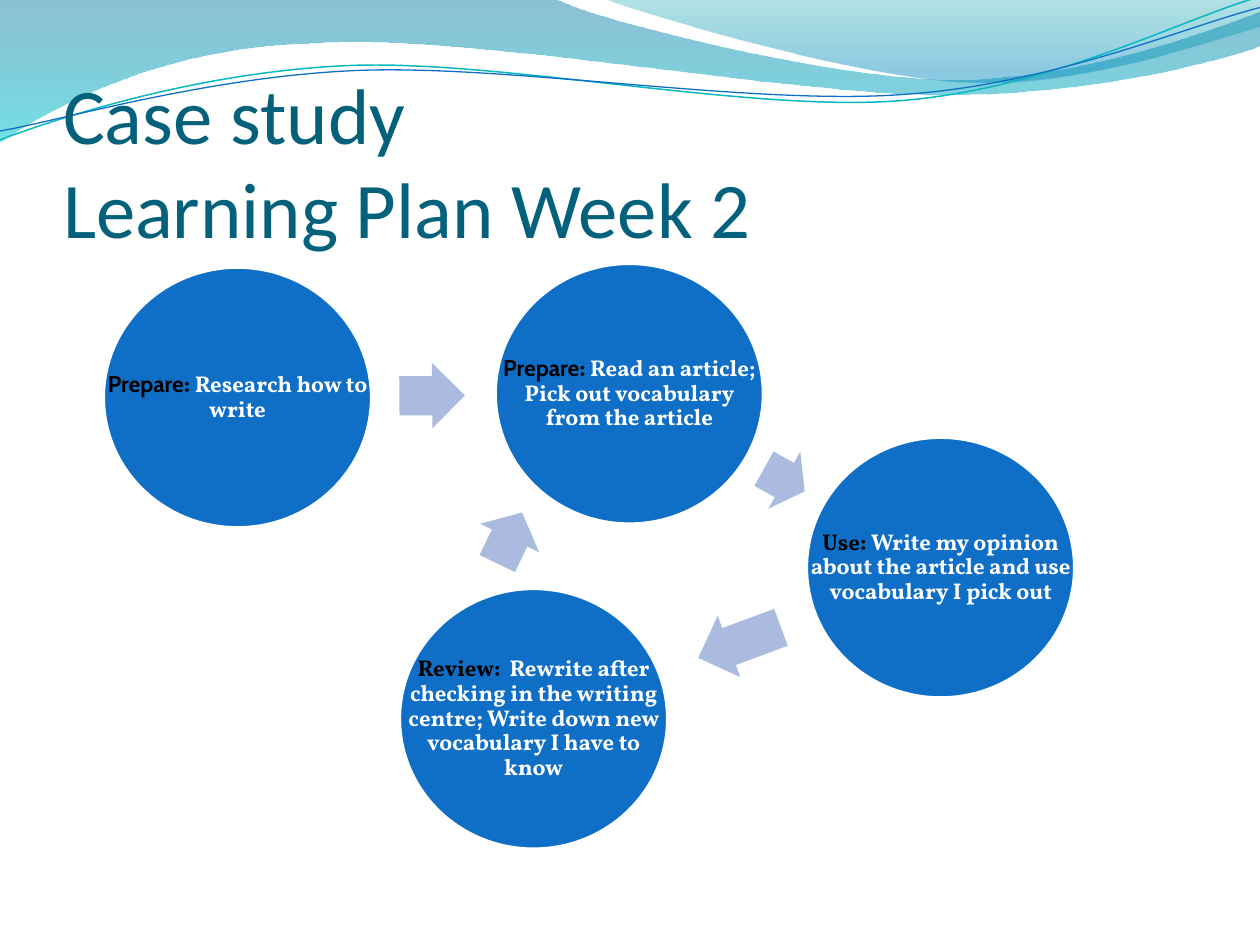
from dataclasses import dataclass
from math import cos, radians, sin

from lxml import etree
from pptx import Presentation
from pptx import util as u
from pptx.dml.color import RGBColor
from pptx.enum import shapes, text
from pptx.oxml.ns import qn


@dataclass(frozen=True)
class Theme:
    title: str = "04617B"
    circle: str = "0F6FC6"
    arrow: str = "ABBBDF"
    white: str = "FFFFFF"
    black: str = "000000"
    teal_line: str = "0AB8BF"
    title_font: str = "Calibri"
    body_font: str = "Vollkorn"
    label_font: str = "Cabin"
    title_size: int = 45
    body_size: int = 13


THEME = Theme()
CIRCLE_W, CIRCLE_H = 2.13, 2.07
ARROW_H = 0.52
WAVE_TILT = -2.7

BANDS = [
    ([(0, 0), (4.4, -0.01), (4.76, 0.17, 6.64, 0.63, 7.58, 0.63),
      (8.53, 0.63, 9.58, 0.26, 10, 0.09), (10.01, 0.36),
      (9.83, 0.44, 8.7, 0.76, 7.46, 0.75), (6.22, 0.75, 3.82, 0.28, 2.57, 0.34),
      (1.29, 0.36, 0.46, 0.83, -0.01, 1.13), (0, 0)],
     [(0, "0074A1", 45), (1, "00C6CF", 55)]),
    ([(4.79, -0.01), (5.09, 0.11, 6.82, 0.62, 7.69, 0.65),
      (8.56, 0.69, 9.61, 0.32, 10, 0.21), (10, 0), (4.79, -0.01)],
     [(0, "00A1A9", 30), (0.8, "008BBF", 45)]),
]
WAVES = [
    ([(0, 1.11), (0.48, 0.93, 1.58, 0.57, 2.77, 0.52),
      (3.95, 0.47, 5.93, 0.89, 7.13, 0.8), (8.33, 0.71, 9.38, 0.15, 9.98, -0.02)],
     (4.99, 0.57), THEME.teal_line, 0.85),
    ([(0, 1.04), (0.47, 0.96, 1.64, 0.61, 2.83, 0.56),
      (4.03, 0.51, 5.97, 0.84, 7.17, 0.75), (8.36, 0.67, 9.41, 0.21, 10, 0.06)],
     (5, 0.59), THEME.circle, 0.75),
]
STEPS = [
    (3.93, 2.09, [("Prepare", THEME.label_font), (": ", THEME.body_font)],
     "Read an article; Pick out vocabulary from the article"),
    (6.4, 3.47, [("Use: ", THEME.body_font)],
     "Write my opinion about the article and use vocabulary I pick out"),
    (3.17, 4.67, [("Review:  ", THEME.body_font)],
     "Rewrite after checking in the writing centre; Write down new vocabulary I have to know"),
    (0.82, 2.12, [("Prepare", THEME.label_font), (": ", THEME.body_font)],
     "Research how to write"),
]
ARROWS = [
    (6.04, 3.55, 0.37, 29.2),
    (5.52, 4.84, 0.7, 159.7),
    (3.82, 4.01, 0.45, 295.9),
    (3.17, 2.88, 0.52, 359.6),
]


def rgb(value):
    return RGBColor.from_string(value)


def pairs(segment):
    return list(zip(segment[::2], segment[1::2]))


def turn(segment, center, degrees):
    c, d = cos(radians(degrees)), sin(radians(degrees))
    cx, cy = center
    return tuple(v for x, y in pairs(segment) for v in (
        cx + (x - cx) * c - (y - cy) * d,
        cy + (x - cx) * d + (y - cy) * c))


def add_curve(s, segments, close):
    points = [(u.Inches(x), u.Inches(y)) for seg in segments for x, y in pairs(seg)]
    builder = s.shapes.build_freeform(*points[0])
    builder.add_line_segments(points[1:], close=close)
    sp = builder.convert_to_shape()
    sp.shadow.inherit = False
    nodes = iter(list(sp._element.spPr.iter(qn("a:lnTo"))))
    for segment in segments[1:]:
        first = next(nodes)
        if len(segment) == 6:
            first.tag = qn("a:cubicBezTo")
            for _ in range(2):
                node = next(nodes)
                first.append(node[0])
                node.getparent().remove(node)
    return sp


def add_band(s, segments, stops):
    sp = add_curve(s, segments, True)
    sp.line.fill.background()
    sp.fill.gradient()
    sp.fill.gradient_angle = 270
    for stop, (position, color, _) in zip(sp.fill.gradient_stops, stops):
        stop.position = position
        stop.color.rgb = rgb(color)
    colors = sp._element.spPr.iter(qn("a:srgbClr"))
    for node, (_, _, opacity) in zip(colors, stops):
        etree.SubElement(node, qn("a:alpha")).set("val", str(opacity * 1000))


def add_wave(s, segments, center, color, width):
    level = [turn(segment, center, -WAVE_TILT) for segment in segments]
    sp = add_curve(s, level, False)
    sp.rotation = WAVE_TILT
    sp.fill.background()
    sp.line.color.rgb = rgb(color)
    sp.line.width = u.Pt(width)


def set_title(s, words):
    title = s.shapes.title
    title.left, title.top = u.Inches(0.5), u.Inches(0.77)
    title.width, title.height = u.Inches(9), u.Inches(1.25)
    tf = title.text_frame
    tf.auto_size = text.MSO_AUTO_SIZE.NONE
    tf.vertical_anchor = text.MSO_ANCHOR.BOTTOM
    tf.margin_left = tf.margin_right = tf.margin_bottom = 0
    tf.margin_top = u.Inches(0.05)
    p = tf.paragraphs[0]
    p.text = words
    p.alignment = text.PP_ALIGN.LEFT
    p.font.name = THEME.title_font
    p.font.size = u.Pt(THEME.title_size)
    p.font.color.rgb = rgb(THEME.title)
    s.shapes._spTree.append(title._element)


def add_step(s, left, top, label, words):
    box = [u.Inches(v) for v in (left, top, CIRCLE_W, CIRCLE_H)]
    sp = s.shapes.add_shape(shapes.MSO_SHAPE.OVAL, *box)
    sp.shadow.inherit = False
    sp.fill.solid()
    sp.fill.fore_color.rgb = rgb(THEME.circle)
    sp.line.color.rgb = rgb(THEME.white)
    sp.line.width = u.Pt(2)

    tf = s.shapes.add_textbox(*box).text_frame
    tf.word_wrap = True
    tf.vertical_anchor = text.MSO_ANCHOR.MIDDLE
    tf.margin_left = tf.margin_right = tf.margin_top = tf.margin_bottom = u.Inches(0.02)
    p = tf.paragraphs[0]
    p.alignment = text.PP_ALIGN.CENTER
    p.line_spacing = 0.9
    p.font.size = u.Pt(THEME.body_size)
    p.font.bold = True
    runs = [(part, font, THEME.black) for part, font in label]
    for part, font, color in runs + [(words, THEME.body_font, THEME.white)]:
        r = p.add_run()
        r.text = part
        r.font.name = font
        r.font.color.rgb = rgb(color)


def add_arrow(s, left, top, width, rotation):
    sp = s.shapes.add_shape(shapes.MSO_SHAPE.RIGHT_ARROW, u.Inches(left), u.Inches(top),
                            u.Inches(width), u.Inches(ARROW_H))
    sp.adjustments[0], sp.adjustments[1] = 0.6, 0.5
    sp.rotation = rotation
    sp.shadow.inherit = False
    sp.fill.solid()
    sp.fill.fore_color.rgb = rgb(THEME.arrow)
    sp.line.fill.background()


def main():
    prs = Presentation()
    prs.slide_width, prs.slide_height = u.Inches(10), u.Inches(7.5)
    s = prs.slides.add_slide(prs.slide_layouts[5])
    for band in BANDS:
        add_band(s, *band)
    for wave in WAVES:
        add_wave(s, *wave)
    set_title(s, "Case study\vLearning Plan Week 2")
    for step, arrow in zip(STEPS, ARROWS):
        add_step(s, *step)
        add_arrow(s, *arrow)
    prs.save("out.pptx")


if __name__ == "__main__":
    main()
